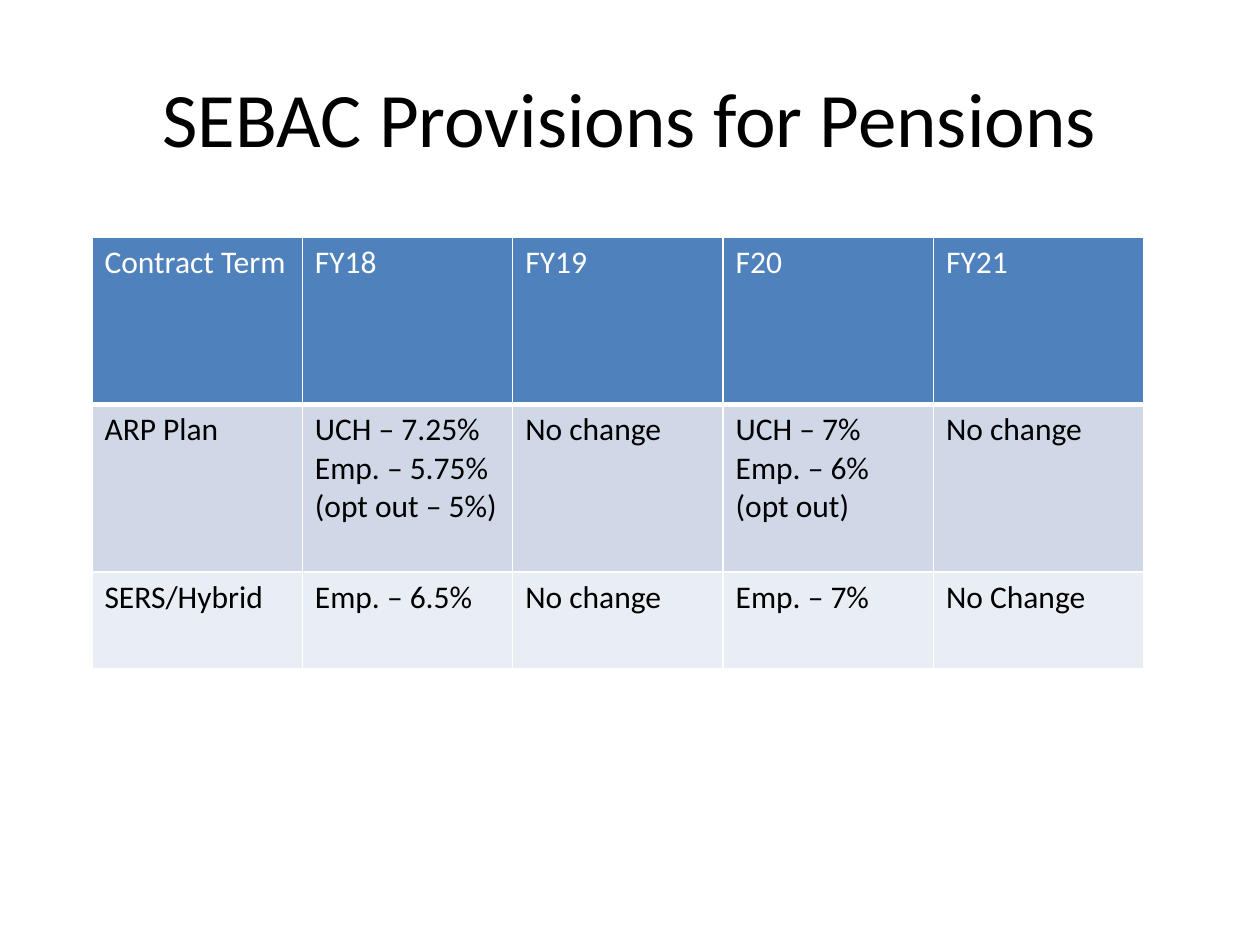
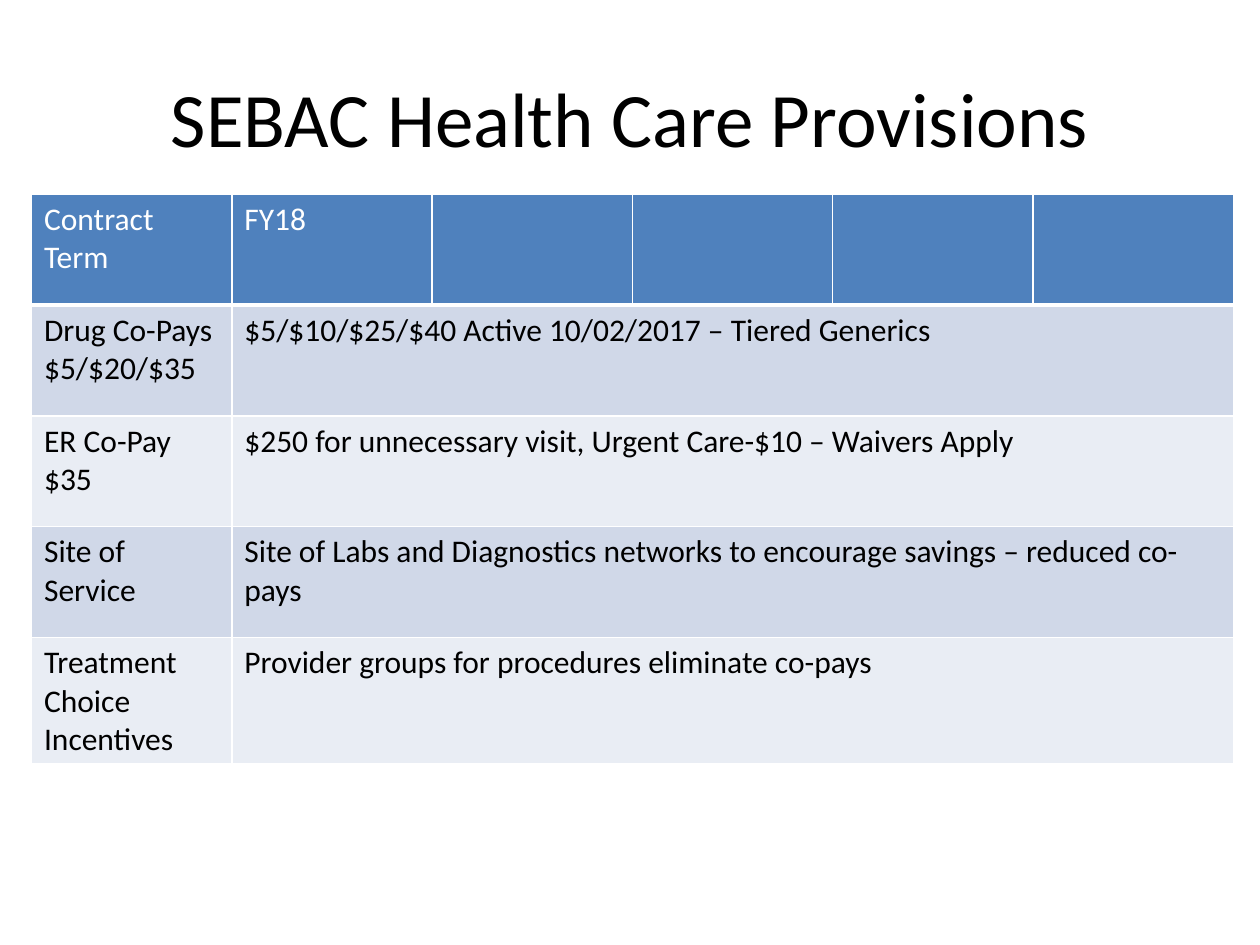
from dataclasses import dataclass

from lxml.etree import SubElement
from pptx import Presentation
from pptx.dml.color import RGBColor
from pptx.enum.text import MSO_ANCHOR, PP_ALIGN
from pptx.oxml.ns import qn
from pptx.slide import Slide
from pptx.table import _Cell
from pptx.text.text import TextFrame
from pptx.util import Inches, Pt

COLORS = {
    "text": "000000",
    "header_text": "FFFFFF",
    "header": "4F81BD",
    "odd_row": "D0D8E8",
    "even_row": "E9EDF4",
    "rule": "FFFFFF",
}
TITLE_FONT = {"name": "Calibri", "size": Pt(44), "bold": False}
CELL_FONT = {"name": "Calibri", "size": Pt(18), "bold": False}


@dataclass(frozen=True)
class ProvisionSlide:
    """A title and a grid; a row shorter than the header merges its last cell to the edge."""
    title: str
    left: float
    top: float
    column_width: float
    row_heights: list[float]
    rows: list[list[str]]


SLIDES = [
    ProvisionSlide(
        "SEBAC Provisions for Pensions", 0.73, 1.88, 1.67, [1.33, 1.33, 0.77],
        [
            ["Contract Term", "FY18", "FY19", "F20", "FY21"],
            ["ARP Plan", "UCH – 7.25%\nEmp. – 5.75%\n(opt out – 5%)", "No change",
             "UCH – 7%\nEmp. – 6%\n(opt out)", "No change"],
            ["SERS/Hybrid", "Emp. – 6.5%", "No change", "Emp. – 7%", "No Change"],
        ],
    ),
    ProvisionSlide(
        "SEBAC Health Care Provisions", 0.25, 1.54, 1.59, [0.88] * 5,
        [
            ["Contract Term", "FY18", "", "", "", ""],
            ["Drug Co-Pays\n$5/$20/$35",
             "$5/$10/$25/$40 Active 10/02/2017 – Tiered Generics"],
            ["ER Co-Pay\n$35",
             "$250 for unnecessary visit, Urgent Care-$10 – Waivers Apply"],
            ["Site of Service",
             "Site of Labs and Diagnostics networks to encourage savings – reduced co-pays"],
            ["Treatment Choice Incentives",
             "Provider groups for procedures eliminate co-pays"],
        ],
    ),
]


def write_text(frame: TextFrame, text: str, font_format: dict, color: str,
               alignment: PP_ALIGN = PP_ALIGN.LEFT) -> None:
    frame.text = text
    for paragraph in frame.paragraphs:
        paragraph.alignment = alignment
        for run in paragraph.runs:
            for attribute, value in font_format.items():
                setattr(run.font, attribute, value)
            run.font.color.rgb = RGBColor.from_string(COLORS[color])


def style_cell(cell: _Cell, fill: str, bottom_rule: int) -> None:
    # Borders come before the fill in the cell properties
    properties = cell._tc.get_or_add_tcPr()
    for side, width in {"L": 1, "R": 1, "T": 1, "B": bottom_rule}.items():
        rule = SubElement(properties, qn(f"a:ln{side}"), w=str(Pt(width)))
        rule_fill = SubElement(rule, qn("a:solidFill"))
        SubElement(rule_fill, qn("a:srgbClr"), val=COLORS["rule"])
    cell.fill.solid()
    cell.fill.fore_color.rgb = RGBColor.from_string(COLORS[fill])


def add_title(slide: Slide, title: str) -> None:
    frame = slide.shapes.add_textbox(
        Inches(0.5), Inches(0.3), Inches(9), Inches(1.25)).text_frame
    frame.word_wrap = True
    frame.vertical_anchor = MSO_ANCHOR.MIDDLE
    write_text(frame, title, TITLE_FONT, "text", PP_ALIGN.CENTER)


def add_provisions(slide: Slide, content: ProvisionSlide) -> None:
    column_count = len(content.rows[0])
    provisions = slide.shapes.add_table(
        len(content.rows), column_count,
        Inches(content.left), Inches(content.top),
        Inches(content.column_width * column_count),
        Inches(sum(content.row_heights)),
    ).table
    provisions.first_row = provisions.horz_banding = False
    for column in provisions.columns:
        column.width = Inches(content.column_width)

    for row_index, texts in enumerate(content.rows):
        provisions.rows[row_index].height = Inches(content.row_heights[row_index])
        is_header = row_index == 0
        fill = "header" if is_header else ("odd_row" if row_index % 2 else "even_row")
        for column_index in range(column_count):
            style_cell(provisions.cell(row_index, column_index), fill,
                       3 if is_header else 1)
        for column_index, text in enumerate(texts):
            write_text(provisions.cell(row_index, column_index).text_frame, text,
                       CELL_FONT, "header_text" if is_header else "text")
        # A provision that holds for all years spans the remaining columns
        if len(texts) < column_count:
            provisions.cell(row_index, len(texts) - 1).merge(
                provisions.cell(row_index, column_count - 1))


def main() -> None:
    presentation = Presentation()
    presentation.slide_width = Inches(10)
    presentation.slide_height = Inches(7.5)
    for content in SLIDES:
        slide = presentation.slides.add_slide(presentation.slide_layouts[6])
        add_title(slide, content.title)
        add_provisions(slide, content)
    presentation.save("out.pptx")


if __name__ == "__main__":
    main()
